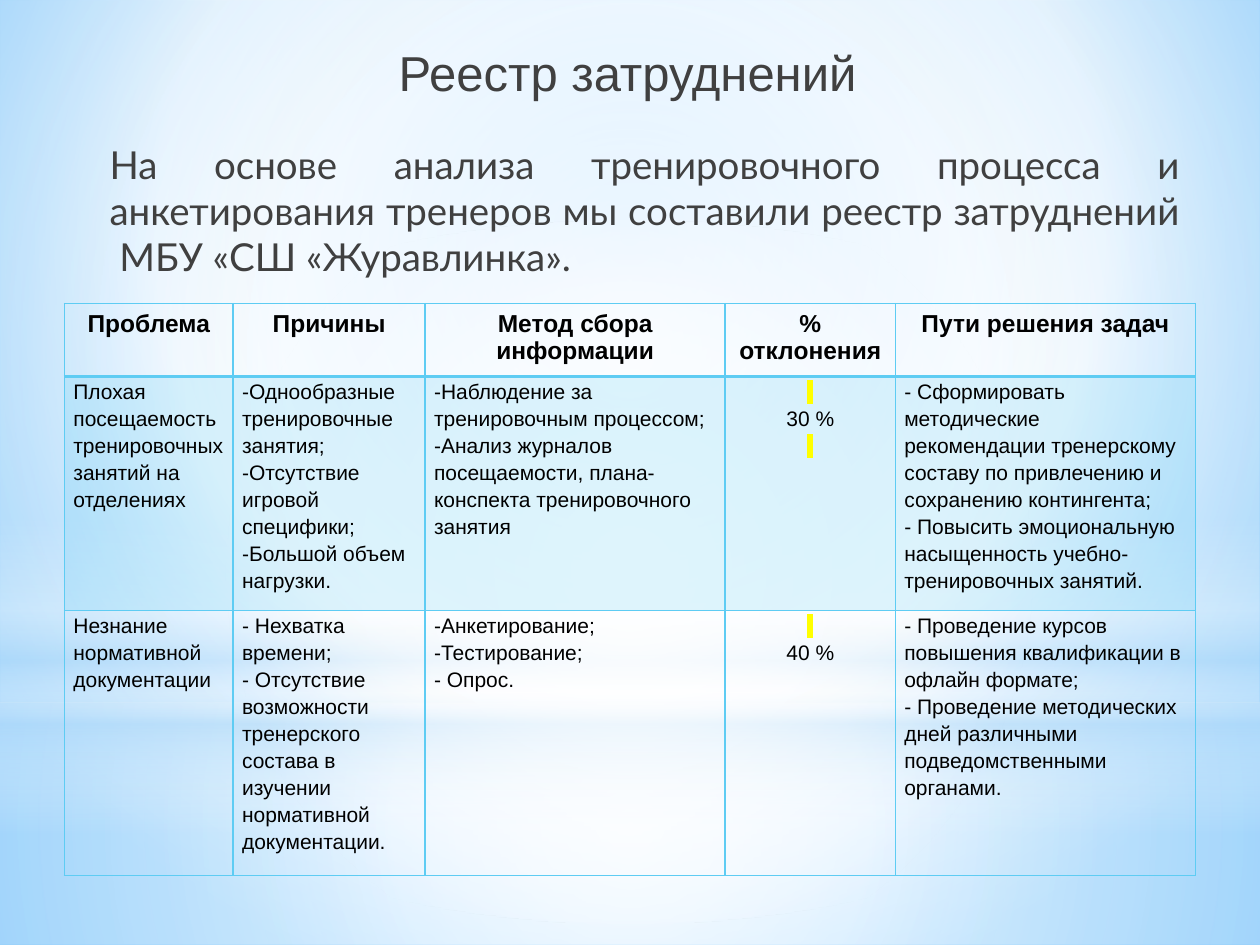
"""Build the slide with the register of difficulties and its table."""
from lxml.etree import SubElement, fromstring
from pptx import Presentation
from pptx.dml.color import RGBColor
from pptx.enum.shapes import MSO_SHAPE
from pptx.enum.text import PP_ALIGN
from pptx.oxml.ns import qn
from pptx.util import Cm, Pt

HUES = {"text": "404040", "ink": "000000", "line": "5ECCF3", "mark": "FFFF00",
        "white": "FFFFFF", "pale": "B4DCFA", "sky": "9ED5FF", "deep": "5BB9FF"}
NBSP = " "
MID = (50, 50, 50, 50)


def blend(stops, rect=None):
    """Return a gradient: round when a focus is given, else top to bottom."""
    fill = fromstring('<a:gradFill xmlns:a="http://schemas.openxmlformats.org/'
                      'drawingml/2006/main" rotWithShape="1"/>')
    items = SubElement(fill, qn("a:gsLst"))
    for pos, hue, alpha in stops:
        stop = SubElement(items, qn("a:gs"), pos=str(pos * 1000))
        tint = SubElement(stop, qn("a:srgbClr"), val=HUES[hue])
        if alpha < 100:
            SubElement(tint, qn("a:alpha"), val=str(alpha * 1000))
    if rect:
        path = SubElement(fill, qn("a:path"), path="circle")
        SubElement(path, qn("a:fillToRect"),
                   {side: str(part * 1000) for side, part in zip("ltrb", rect)})
    else:
        SubElement(fill, qn("a:lin"), ang="5400000", scaled="0")
    return fill


def write(frame, lines, hue, look, form):
    """Fill a text frame with one formatted paragraph for each line."""
    for num, line in enumerate(lines):
        para = frame.add_paragraph() if num else frame.paragraphs[0]
        for name, value in form.items():
            setattr(para, name, value)
        run = para.add_run()
        run.text = line
        for name, value in look.items():
            setattr(run.font, name, value)
        run.font.color.rgb = RGBColor.from_string(HUES[hue])
        if line == NBSP:
            mark = fromstring('<a:highlight xmlns:a="http://schemas.openxmlformats'
                              '.org/drawingml/2006/main"/>')
            SubElement(mark, qn("a:srgbClr"), val=HUES["mark"])
            run.font._element.find(qn("a:solidFill")).addnext(mark)


deck = Presentation()
deck.slide_width, deck.slide_height = Cm(25.4), Cm(19.05)
slide = deck.slides.add_slide(deck.slide_layouts[6])

slide.background.fill.solid()
base = slide.element.find(".//" + qn("p:bgPr"))
base.replace(base[0], blend([(0, "sky", 100), (60, "white", 100), (100, "deep", 100)],
                            (20, 10, 20, 60)))

layers = [
    (MSO_SHAPE.RECTANGLE, 14.17, 4.88, MID,
     [(0, "white", 91), (37, "white", 76), (100, "pale", 79)]),
    (MSO_SHAPE.RECTANGLE, 0, 14.17, MID,
     [(0, "white", 89), (48, "white", 62), (100, "pale", 79)]),
    (MSO_SHAPE.RECTANGLE, 10.46, 6.35, None,
     [(0, "white", 0), (29, "white", 30), (45, "pale", 40),
      (55, "white", 26), (65, "pale", 60), (100, "white", 0)]),
    (MSO_SHAPE.OVAL, 4.45, 14.17, MID, [(0, "white", 100), (56, "white", 0)]),
]
for kind, top, high, rect, stops in layers:
    layer = slide.shapes.add_shape(kind, 0, Cm(top), deck.slide_width, Cm(high))
    layer.shadow.inherit = False
    layer.line.fill.background()
    layer.fill.solid()
    props = layer.element.spPr
    props.replace(props.find(qn("a:solidFill")), blend(stops, rect))

texts = [
    ((3.15, 0.74, 19, 2), "Реестр затруднений",
     {"name": "Arial", "size": Pt(28)}, {"alignment": PP_ALIGN.CENTER}),
    ((1.83, 2.72, 22.2, 3.4),
     "На основе анализа тренировочного процесса и анкетирования тренеров "
     "мы составили реестр затруднений " + NBSP + "МБУ «СШ «Журавлинка».",
     {"name": "Lato", "size": Pt(22)},
     {"alignment": PP_ALIGN.JUSTIFY, "space_after": Pt(3)}),
]
for place, line, look, form in texts:
    frame = slide.shapes.add_textbox(*map(Cm, place)).text_frame
    frame.word_wrap = True
    write(frame, [line], "text", look, form)
props = frame.paragraphs[0]._p.get_or_add_pPr()
props.set("marL", str(Cm(0.13)))
props.set("indent", "0")

rows = [
    [["Проблема"], ["Причины"], ["Метод сбора информации"],
     ["%", "отклонения"], ["Пути решения задач"]],
    [["Плохая посещаемость тренировочных занятий на отделениях"],
     ["-Однообразные тренировочные занятия;", "-Отсутствие игровой специфики;",
      "-Большой объем нагрузки."],
     ["-Наблюдение за тренировочным процессом;",
      "-Анализ журналов посещаемости, плана-конспекта тренировочного занятия"],
     [NBSP, "30 %", NBSP],
     ["- Сформировать методические рекомендации тренерскому составу по "
      "привлечению и сохранению контингента;",
      "- Повысить эмоциональную насыщенность учебно-тренировочных занятий."]],
    [["Незнание нормативной документации"],
     ["- Нехватка времени;",
      "- Отсутствие возможности тренерского состава в изучении нормативной "
      "документации."],
     ["-Анкетирование;", "-Тестирование;", "- Опрос."],
     [NBSP, "40 %"],
     ["- Проведение курсов повышения квалификации в офлайн формате;",
      "- Проведение методических дней различными подведомственными органами."]],
]
wide = [3.4, 3.87, 6.05, 3.43, 6.05]
tall = [1.47, 4.72, 5.34]
head = {"name": "Arial", "size": Pt(14), "bold": True}
body = {"name": "Arial", "size": Pt(12), "bold": False}
inset = {"margin_left": Cm(0.18), "margin_right": Cm(0.18),
         "margin_top": 0, "margin_bottom": 0}

table = slide.shapes.add_table(len(rows), len(wide), Cm(1.3), Cm(6.12),
                               Cm(sum(wide)), Cm(sum(tall))).table
table.first_row = table.horz_banding = False
for col, size in zip(table.columns, wide):
    col.width = Cm(size)
for row, size in zip(table.rows, tall):
    row.height = Cm(size)

for r, row in enumerate(rows):
    for c, lines in enumerate(row):
        cell = table.cell(r, c)
        form = {"alignment": PP_ALIGN.CENTER if r == 0 or c == 3 else PP_ALIGN.LEFT}
        if r:
            form["line_spacing"] = 1.15
            for name, value in inset.items():
                setattr(cell, name, value)
        write(cell.text_frame, lines, "ink", body if r else head, form)
        props = cell._tc.get_or_add_tcPr()
        for side in "LRTB":
            bold = (r, side) in ((0, "B"), (1, "T"))
            edge = SubElement(props, qn("a:ln" + side), w=str(Pt(2 if bold else 1)))
            ink = SubElement(edge, qn("a:solidFill"))
            SubElement(ink, qn("a:srgbClr"), val=HUES["line"])
        if r == 1:
            cell.fill.solid()
            cell.fill.fore_color.rgb = RGBColor.from_string(HUES["line"])
            tint = props.find(qn("a:solidFill"))[0]
            SubElement(tint, qn("a:alpha"), val="20000")
        else:
            cell.fill.background()

deck.save("out.pptx")
